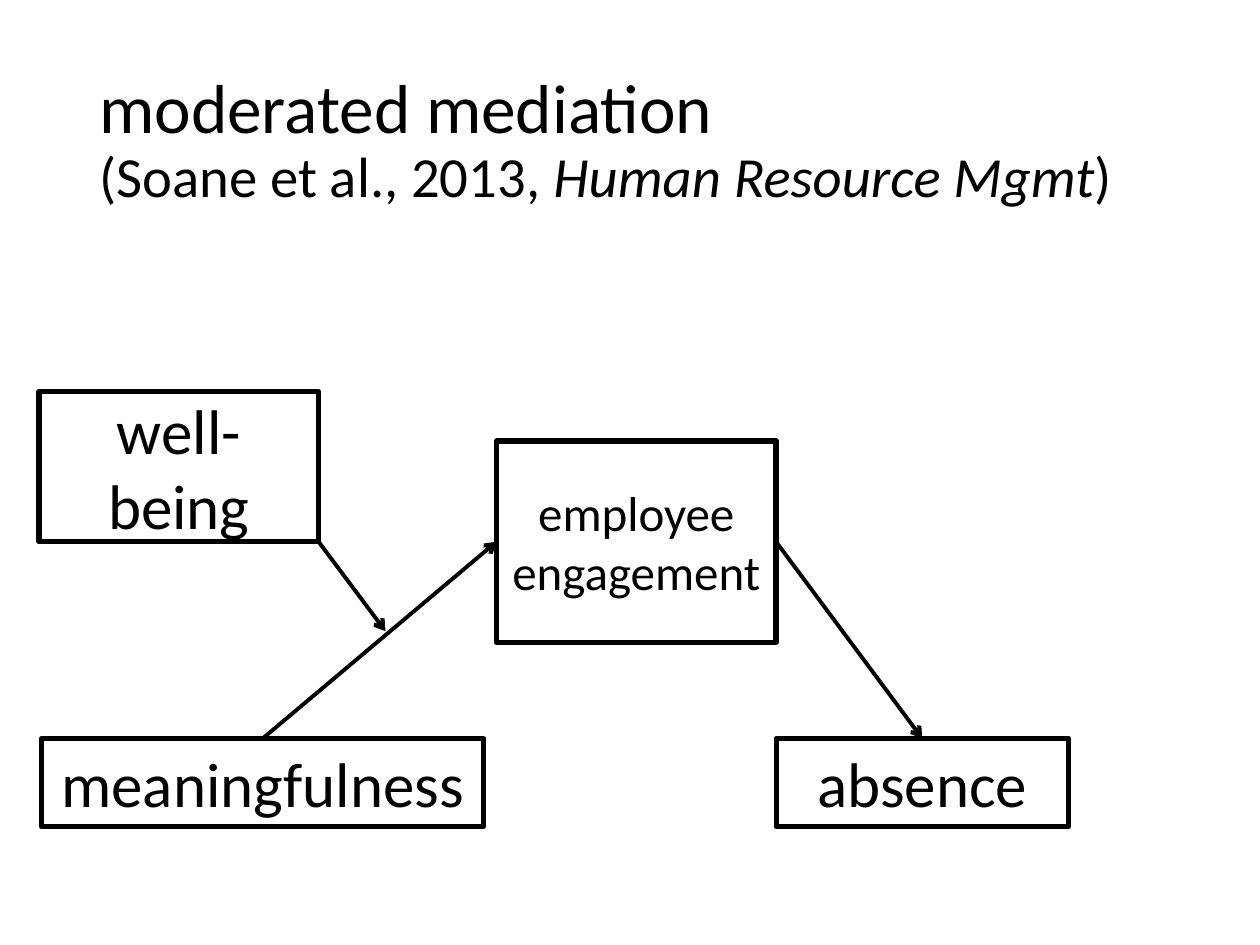
from lxml import etree
from pptx import Presentation
from pptx.dml.color import RGBColor
from pptx.enum import shapes, text
from pptx.oxml.ns import qn
from pptx.util import Pt

BLACK = RGBColor(0, 0, 0)
TOP, LEFT, RIGHT = 0, 1, 3  # connection sites of a rectangle


class PathDiagram:
    """Holds the style and the current slide."""
    font_name = "Calibri"
    box_line = Pt(3)
    arrow_line = Pt(2.25)

    def __init__(self, slide):
        self.slide = slide

    def style_font(self, font, size):
        font.name = self.font_name
        font.size = Pt(size)
        font.color.rgb = BLACK

    def title(self, heading, citation, left, top, width, height):
        shape = self.slide.shapes.title
        shape.left, shape.top = Pt(left), Pt(top)
        shape.width, shape.height = Pt(width), Pt(height)
        frame = shape.text_frame
        frame.auto_size = text.MSO_AUTO_SIZE.NONE
        frame.vertical_anchor = text.MSO_ANCHOR.MIDDLE
        paragraph = frame.paragraphs[0]
        paragraph.alignment = text.PP_ALIGN.LEFT
        paragraph.line_spacing = 0.9
        run = paragraph.add_run()
        run.text = heading
        self.style_font(run.font, 39.6)
        paragraph.add_line_break()
        for words, italic in citation:
            run = paragraph.add_run()
            run.text = words
            self.style_font(run.font, 32.4)
            run.font.italic = italic

    def box(self, label, left, top, width, height, size=36):
        shape = self.slide.shapes.add_shape(
            shapes.MSO_SHAPE.RECTANGLE, Pt(left), Pt(top), Pt(width), Pt(height))
        shape.shadow.inherit = False
        shape.fill.background()
        shape.line.color.rgb = BLACK
        shape.line.width = self.box_line
        frame = shape.text_frame
        frame.word_wrap = True
        frame.vertical_anchor = text.MSO_ANCHOR.MIDDLE
        paragraph = frame.paragraphs[0]
        paragraph.text = label
        paragraph.alignment = text.PP_ALIGN.CENTER
        self.style_font(paragraph.font, size)
        return shape

    def arrow(self, start=(0, 0), end=(0, 0)):
        connector = self.slide.shapes.add_connector(
            shapes.MSO_CONNECTOR.STRAIGHT, *start, *end)
        connector.line.color.rgb = BLACK
        connector.line.width = self.arrow_line
        etree.SubElement(connector.line._get_or_add_ln(), qn("a:tailEnd"), type="arrow")
        etree.SubElement(connector._element.spPr, qn("a:effectLst"))
        return connector

    def link(self, source, source_site, target, target_site):
        connector = self.arrow()
        connector.begin_connect(source, source_site)
        connector.end_connect(target, target_site)


def main():
    presentation = Presentation()
    presentation.slide_width, presentation.slide_height = Pt(720), Pt(540)
    title_only = presentation.slide_layouts[5]
    diagram = PathDiagram(presentation.slides.add_slide(title_only))

    # Title with citation
    diagram.title(
        "moderated mediation",
        [("(Soane et al., 2013, ", False), ("Human Resource Mgmt", True), (")", False)],
        49.5, 28.75, 621, 104.4)

    # Mediation path
    meaningfulness = diagram.box("meaningfulness", 23.75, 422, 252.7, 50.4)
    absence = diagram.box("absence", 443.5, 422, 167, 50.4)
    engagement = diagram.box("employee engagement", 283.7, 252, 159.8, 115.2, size=28)
    diagram.link(meaningfulness, TOP, engagement, LEFT)
    diagram.link(engagement, RIGHT, absence, TOP)

    # Moderator, pointing at the first path
    well_being = diagram.box("well-being", 22.3, 223.9, 159.8, 85.7)
    corner = (well_being.left + well_being.width, well_being.top + well_being.height)
    diagram.arrow(corner, (Pt(220.3), Pt(360.7)))

    presentation.save("out.pptx")


if __name__ == "__main__":
    main()
